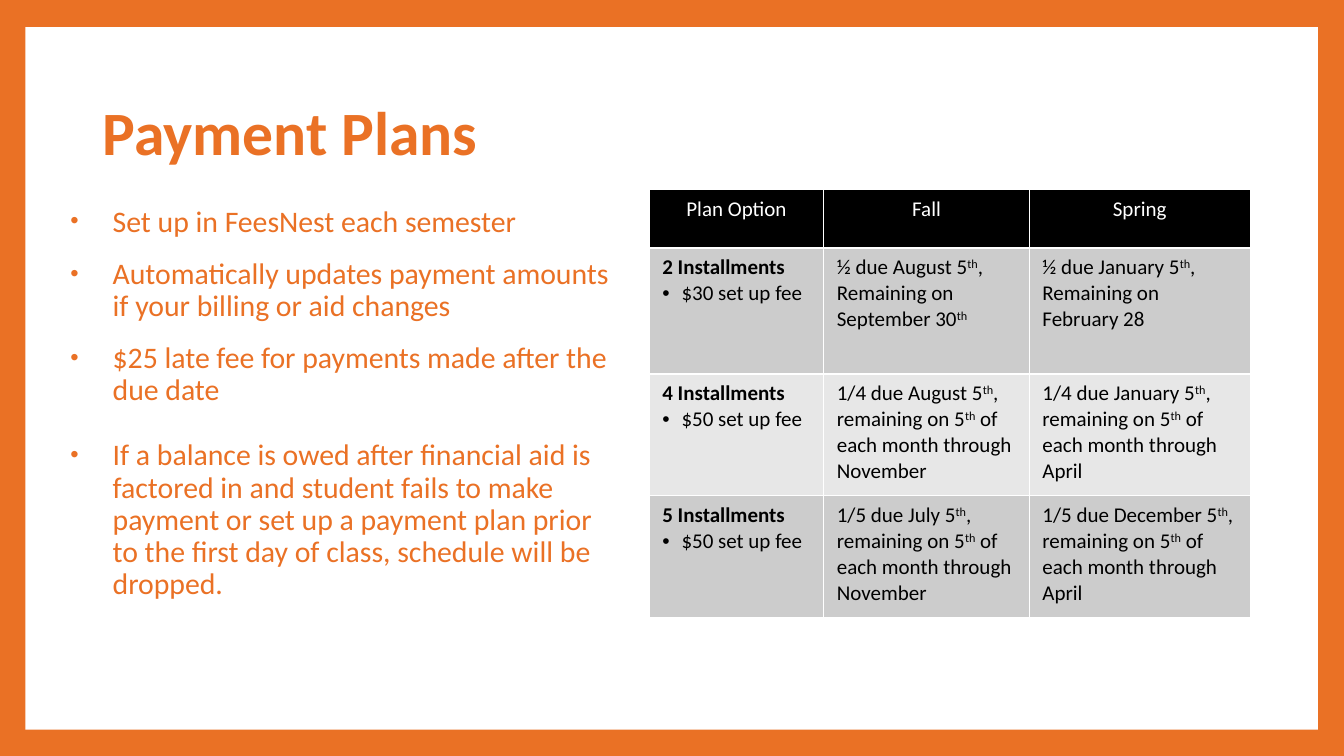
"""Build the payment plans slide with its bullet list and installment table."""
from dataclasses import dataclass

from lxml.etree import SubElement
from pptx import Presentation
from pptx.dml.color import RGBColor
from pptx.enum.shapes import MSO_SHAPE
from pptx.enum.text import MSO_ANCHOR, MSO_AUTO_SIZE, PP_ALIGN
from pptx.oxml.ns import qn
from pptx.slide import Slide
from pptx.util import Inches, Pt

WIDTH, HEIGHT = Inches(13.33), Inches(7.5)
FONT = "Calibri"
COLORS = {
    "orange": "EA7125",
    "white": "FFFFFF",
    "black": "000000",
    "dark band": "CCCCCC",
    "light band": "E7E7E7",
}


@dataclass(frozen=True)
class Box:
    """A frame given in percent of the slide's width and height."""

    left: float
    top: float
    width: float
    height: float

    def frame(self) -> tuple[int, int, int, int]:
        return across(self.left), down(self.top), across(self.width), down(self.height)


@dataclass(frozen=True)
class Bullet:
    text: str
    space_before: float = 14.4
    line_spacing: float = 0.9


@dataclass(frozen=True)
class Plan:
    installments: int
    fee: int
    fall: tuple[str, str]
    spring: tuple[str, str]


PANEL = Box(1.88, 3.6, 96.17, 92.93)
TITLE = Box(6.9, 8.27, 86.27, 19.33)
BULLET_LIST = Box(3.3, 26.13, 42.99, 55.07)
COLUMNS = (12.98, 15.3, 16.43)
ROWS = (7.73, 16.67, 16.13, 16.13)
TABLE = Box(48.31, 25.07, sum(COLUMNS), sum(ROWS))

BULLETS = (
    Bullet("Set up in FeesNest each semester", 0, 1.0),
    Bullet("Automatically updates payment amounts if your billing or aid changes"),
    Bullet("$25 late fee for payments made after the due date"),
    Bullet(
        "If a balance is owed after financial aid is factored in and student fails to make "
        "payment or set up a payment plan prior to the first day of class, "
        "schedule will be dropped.",
        23.4,
    ),
)

HEADINGS = ("Plan Option", "Fall", "Spring")
MONTHLY = "remaining on 5^th^ of each month through "
PLANS = (
    Plan(2, 30, ("½ due August 5^th^,", "Remaining on September 30^th^"),
         ("½ due January 5^th^,", "Remaining on February 28")),
    Plan(4, 50, ("1/4 due August 5^th^,", MONTHLY + "November"),
         ("1/4 due January 5^th^,", MONTHLY + "April")),
    Plan(5, 50, ("1/5 due July 5^th^,", MONTHLY + "November"),
         ("1/5 due December 5^th^,", MONTHLY + "April")),
)


def across(percent: float) -> int:
    return round(WIDTH * percent / 100)


def down(percent: float) -> int:
    return round(HEIGHT * percent / 100)


def color(name: str) -> RGBColor:
    return RGBColor.from_string(COLORS[name])


def write(paragraph, text: str, *, size: float, ink: str, bold: bool = False,
          align: PP_ALIGN = PP_ALIGN.LEFT, line_spacing: float = 1.0,
          space_before: float = 0) -> None:
    paragraph.alignment = align
    paragraph.line_spacing = line_spacing
    paragraph.space_before = Pt(space_before)
    for index, part in enumerate(text.split("^")):
        if not part:
            continue
        run = paragraph.add_run()
        run.text = part
        run.font.name = FONT
        run.font.size = Pt(size)
        run.font.bold = bold
        run.font.color.rgb = color(ink)
        if index % 2:
            run.font._element.set("baseline", "30000")


def add_bullet(paragraph, *, ink: str, left: float, hanging: float, percent: int = 100) -> None:
    properties = paragraph._p.get_or_add_pPr()
    properties.set("marL", str(Inches(left)))
    properties.set("indent", str(-Inches(hanging)))
    bullet_color = SubElement(properties, qn("a:buClr"))
    SubElement(bullet_color, qn("a:srgbClr"), val=COLORS[ink])
    SubElement(properties, qn("a:buSzPct"), val=str(percent * 1000))
    SubElement(properties, qn("a:buFont"), typeface="Arial")
    SubElement(properties, qn("a:buChar"), char="•")


def draw_panel(slide: Slide) -> None:
    slide.background.fill.solid()
    slide.background.fill.fore_color.rgb = color("orange")
    panel = slide.shapes.add_shape(MSO_SHAPE.RECTANGLE, *PANEL.frame())
    panel.shadow.inherit = False
    panel.fill.solid()
    panel.fill.fore_color.rgb = color("white")
    panel.line.fill.background()
    slide.shapes._spTree.insert(2, panel._element)


def draw_title(slide: Slide) -> None:
    title = slide.shapes.title
    title.left, title.top, title.width, title.height = TITLE.frame()
    title.text_frame.auto_size = MSO_AUTO_SIZE.NONE
    title.text_frame.vertical_anchor = MSO_ANCHOR.MIDDLE
    write(title.text_frame.paragraphs[0], "Payment Plans", size=44, ink="orange",
          bold=True, line_spacing=0.9)


def draw_bullets(slide: Slide) -> None:
    text_frame = slide.shapes.add_textbox(*BULLET_LIST.frame()).text_frame
    text_frame.word_wrap = True
    for index, bullet in enumerate(BULLETS):
        paragraph = text_frame.add_paragraph() if index else text_frame.paragraphs[0]
        write(paragraph, bullet.text, size=21.3, ink="orange",
              line_spacing=bullet.line_spacing, space_before=bullet.space_before)
        add_bullet(paragraph, ink="orange", left=0.58, hanging=0.42, percent=80)


def format_cell(cell, fill: str) -> None:
    cell.margin_left = cell.margin_right = Inches(0.13)
    cell.margin_top = cell.margin_bottom = Inches(0.07)
    cell.vertical_anchor = MSO_ANCHOR.TOP
    properties = cell._tc.get_or_add_tcPr()
    for side in ("lnL", "lnR", "lnT", "lnB"):
        border = SubElement(properties, qn(f"a:{side}"), w=str(Pt(1)))
        border_fill = SubElement(border, qn("a:solidFill"))
        SubElement(border_fill, qn("a:srgbClr"), val=COLORS["white"])
    cell.fill.solid()
    cell.fill.fore_color.rgb = color(fill)


def draw_table(slide: Slide) -> None:
    table = slide.shapes.add_table(len(ROWS), len(COLUMNS), *TABLE.frame()).table
    for column, width in zip(table.columns, COLUMNS):
        column.width = across(width)
    for row, height in zip(table.rows, ROWS):
        row.height = down(height)
    for column_index, heading in enumerate(HEADINGS):
        cell = table.cell(0, column_index)
        format_cell(cell, "black")
        write(cell.text_frame.paragraphs[0], heading, size=15, ink="white",
              align=PP_ALIGN.CENTER)
    for row_index, plan in enumerate(PLANS, start=1):
        option = (f"{plan.installments} Installments", f"${plan.fee} set up fee")
        for column_index, (first, second) in enumerate((option, plan.fall, plan.spring)):
            is_option = column_index == 0
            cell = table.cell(row_index, column_index)
            format_cell(cell, "dark band" if row_index % 2 else "light band")
            write(cell.text_frame.paragraphs[0], first, size=15, ink="black", bold=is_option)
            paragraph = cell.text_frame.add_paragraph()
            write(paragraph, second, size=15, ink="black")
            if is_option:
                add_bullet(paragraph, ink="black", left=0.19, hanging=0.19)


def main() -> None:
    presentation = Presentation()
    presentation.slide_width, presentation.slide_height = WIDTH, HEIGHT
    slide = presentation.slides.add_slide(presentation.slide_layouts.get_by_name("Title Only"))
    draw_panel(slide)
    draw_title(slide)
    draw_bullets(slide)
    draw_table(slide)
    presentation.save("out.pptx")


if __name__ == "__main__":
    main()
